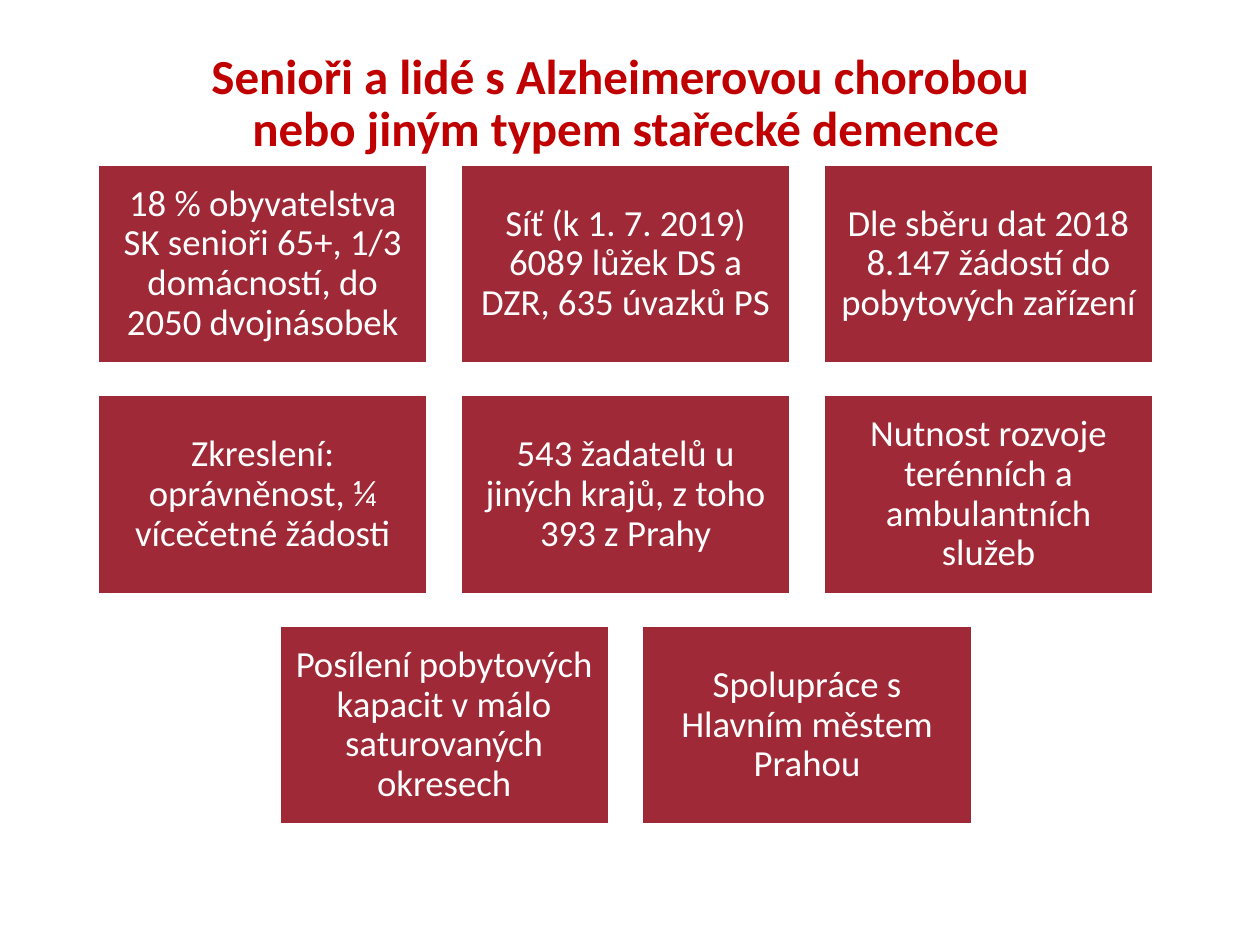
import pptx
import pptx.util
import pptx.dml.color
import pptx.enum.shapes
import pptx.enum.text

Inches = pptx.util.Inches
Pt = pptx.util.Pt
RGBColor = pptx.dml.color.RGBColor
CENTER = pptx.enum.text.PP_ALIGN.CENTER

TITLE_RED = RGBColor(0xC0, 0x00, 0x00)
CARD_RED = RGBColor(0x9F, 0x29, 0x36)
WHITE = RGBColor(0xFF, 0xFF, 0xFF)
FONT = "Calibri"

# Card grid in inches; every row is centred on GRID_CENTER
CARD_WIDTH, CARD_HEIGHT = 2.61, 1.57
COLUMN_STEP, ROW_STEP = 2.88, 1.83
GRID_CENTER, GRID_TOP = 4.965, 1.31

TITLE_LINES = [
    "Senioři a lidé s Alzheimerovou chorobou ",
    "nebo jiným typem stařecké demence",
]
CARD_ROWS = [
    [
        "18 % obyvatelstva SK senioři 65+, 1/3 domácností, do 2050 dvojnásobek",
        "Síť (k 1. 7. 2019) 6089 lůžek DS a DZR, 635 úvazků PS",
        "Dle sběru dat 2018 8.147 žádostí do pobytových zařízení",
    ],
    [
        "Zkreslení: oprávněnost, ¼ vícečetné žádosti",
        "543 žadatelů u jiných krajů, z toho 393 z Prahy",
        "Nutnost rozvoje terénních a ambulantních služeb",
    ],
    [
        "Posílení pobytových kapacit v málo saturovaných okresech",
        "Spolupráce s Hlavním městem Prahou",
    ],
]


def write_lines(frame, lines, size, color, bold=False):
    """Write centred lines, split by line breaks, into one paragraph."""
    frame.word_wrap = True
    paragraph = frame.paragraphs[0]
    paragraph.alignment = CENTER
    paragraph.line_spacing = 0.9
    for index, line in enumerate(lines):
        if index:
            paragraph.add_line_break()
        run = paragraph.add_run()
        run.text = line
        run.font.name = FONT
        run.font.size = Pt(size)
        run.font.bold = bold
        run.font.color.rgb = color


def fill_title(slide):
    heading = slide.shapes.title
    heading.left, heading.top = Inches(0.43), Inches(0.36)
    heading.width, heading.height = Inches(9.07), Inches(1.18)
    frame = heading.text_frame
    frame.auto_size = pptx.enum.text.MSO_AUTO_SIZE.NONE
    frame.vertical_anchor = pptx.enum.text.MSO_ANCHOR.TOP
    write_lines(frame, TITLE_LINES, 28, TITLE_RED, bold=True)


def add_card(slide, left, top, wording):
    card = slide.shapes.add_shape(
        pptx.enum.shapes.MSO_SHAPE.RECTANGLE,
        Inches(left), Inches(top), Inches(CARD_WIDTH), Inches(CARD_HEIGHT))
    card.shadow.inherit = False
    card.fill.solid()
    card.fill.fore_color.rgb = CARD_RED
    card.line.color.rgb = WHITE
    card.line.width = Pt(1)
    frame = card.text_frame
    frame.margin_left = frame.margin_right = Inches(0.09)
    frame.margin_top = frame.margin_bottom = Inches(0.09)
    frame.vertical_anchor = pptx.enum.text.MSO_ANCHOR.MIDDLE
    write_lines(frame, [wording], 21, WHITE)


def add_card_row(slide, row, wordings):
    row_width = (len(wordings) - 1) * COLUMN_STEP + CARD_WIDTH
    row_left = GRID_CENTER - row_width / 2
    for column, wording in enumerate(wordings):
        add_card(slide, row_left + column * COLUMN_STEP,
                 GRID_TOP + row * ROW_STEP, wording)


def main():
    deck = pptx.Presentation()
    deck.slide_width, deck.slide_height = Inches(10), Inches(7.5)
    slide = deck.slides.add_slide(deck.slide_layouts[5])  # Title Only

    # Heading
    fill_title(slide)

    # Facts and plans
    for row, wordings in enumerate(CARD_ROWS):
        add_card_row(slide, row, wordings)

    deck.save("out.pptx")


if __name__ == "__main__":
    main()
